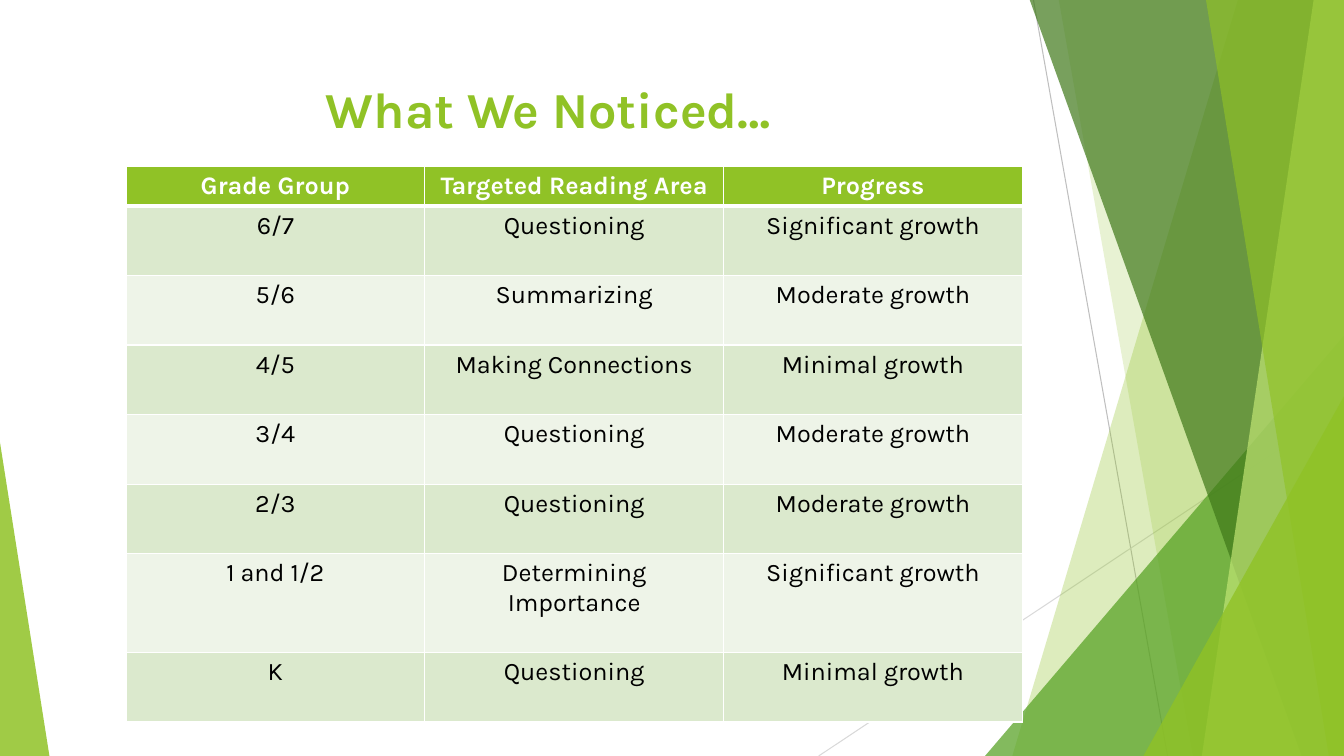
from lxml import etree
from pptx import Presentation
from pptx.dml import color
from pptx.enum import shapes, text
from pptx.oxml import ns
from pptx.util import Inches, Pt

FONT = "Karla"
GREEN = "90C226"
WHITE = "FFFFFF"
BANDS = ("DBE9CD", "EEF4E8")
TOP, RIGHT, BOTTOM = -0.01, 13.33, 7.5
ROWS = [
    ("Grade Group", "Targeted Reading Area", "Progress"),
    ("6/7", "Questioning", "Significant growth"),
    ("5/6", "Summarizing", "Moderate growth"),
    ("4/5", "Making Connections", "Minimal growth"),
    ("3/4", "Questioning", "Moderate growth"),
    ("2/3", "Questioning", "Moderate growth"),
    ("1 and 1/2", "Determining Importance", "Significant growth"),
    ("K", "Questioning", "Minimal growth"),
]
HEIGHTS = [0.39] + [0.69] * 5 + [0.98, 0.69]


def rgb(value):
    """Return the colour for a hex string."""
    return color.RGBColor.from_string(value)


def add_ray(slide, start, end, colour):
    """Draw a thin background line."""
    ray = slide.shapes.add_connector(
        shapes.MSO_CONNECTOR.STRAIGHT, *map(Inches, start + end))
    ray.line.color.rgb = rgb(colour)
    ray.line.width = Pt(0.75)
    etree.SubElement(ray.element.spPr, ns.qn("a:effectLst"))


def paint(shape, colour, opacity):
    """Give a shape a translucent fill without line or shadow."""
    shape.shadow.inherit = False
    shape.fill.solid()
    shape.fill.fore_color.rgb = rgb(colour)
    shape.line.fill.background()
    tint = shape.element.spPr.find(".//" + ns.qn("a:srgbClr"))
    etree.SubElement(tint, ns.qn("a:alpha"), val=str(opacity * 1000))


def add_shard(slide, top_left, bottom_left, colour, opacity):
    """Draw a slanted panel that reaches the right edge of the slide."""
    corners = [(top_left, TOP), (RIGHT, TOP), (RIGHT, BOTTOM), (bottom_left, BOTTOM)]
    points = [(Inches(x), Inches(y)) for x, y in corners]
    builder = slide.shapes.build_freeform(*points[0])
    builder.add_line_segments(points[1:], close=True)
    paint(builder.convert_to_shape(), colour, opacity)


def add_wedge(slide, left, top, width, apex, colour, opacity):
    """Draw a triangle that stands on the bottom edge of the slide."""
    wedge = slide.shapes.add_shape(
        shapes.MSO_SHAPE.ISOSCELES_TRIANGLE,
        *map(Inches, (left, top, width, BOTTOM - top)))
    wedge.adjustments[0] = apex
    paint(wedge, colour, opacity)


def format_text(para, size, colour, bold):
    """Centre a paragraph and set its font."""
    para.alignment = text.PP_ALIGN.CENTER
    para.font.name = FONT
    para.font.size = Pt(size)
    para.font.bold = bold
    para.font.color.rgb = rgb(colour)


def set_title(slide, words):
    """Place and format the title."""
    title = slide.shapes.title
    title.left, title.top, title.width, title.height = map(
        Inches, (0.74, 0.67, 9.4, 0.8))
    frame = title.text_frame
    frame.text = words
    frame.vertical_anchor = text.MSO_ANCHOR.MIDDLE
    format_text(frame.paragraphs[0], 36, GREEN, True)


def add_borders(cell, bottom):
    """Draw white cell borders, with the bottom one in the given width."""
    properties = cell._tc.get_or_add_tcPr()
    widths = {"lnL": 1, "lnR": 1, "lnT": 1, "lnB": bottom}
    for index, (side, width) in enumerate(widths.items()):
        border = etree.Element(ns.qn("a:" + side), w=str(Pt(width)))
        fill = etree.SubElement(border, ns.qn("a:solidFill"))
        etree.SubElement(fill, ns.qn("a:srgbClr"), val=WHITE)
        properties.insert(index, border)


def add_progress_table(slide):
    """Build the table of grade groups and their progress."""
    frame = slide.shapes.add_table(
        len(ROWS), len(ROWS[0]), Inches(1.25), Inches(1.65),
        Inches(8.89), Inches(sum(HEIGHTS)))
    table = frame.table
    for row_index, (row, height) in enumerate(zip(ROWS, HEIGHTS)):
        header = row_index == 0
        table.rows[row_index].height = Inches(height)
        for column_index, words in enumerate(row):
            cell = table.cell(row_index, column_index)
            cell.text = words
            cell.fill.solid()
            cell.fill.fore_color.rgb = rgb(
                GREEN if header else BANDS[(row_index - 1) % 2])
            add_borders(cell, 3 if header else 1)
            format_text(cell.text_frame.paragraphs[0], 18,
                        WHITE if header else "000000", header)


def main():
    """Build the slide and save it."""
    deck = Presentation()
    deck.slide_width, deck.slide_height = Inches(RIGHT), Inches(BOTTOM)
    slide = deck.slides.add_slide(deck.slide_layouts[5])
    add_ray(slide, (10.25, 0), (11.58, BOTTOM), "BFBFBF")
    add_ray(slide, (RIGHT, 4.03), (8.12, BOTTOM), "D9D9D9")
    add_shard(slide, 12.28, 10.04, GREEN, 30)
    add_shard(slide, 10.5, 11.83, GREEN, 20)
    add_wedge(slide, 9.77, 3.33, 3.56, 1, "54A021", 72)
    add_shard(slide, 10.21, 12.91, "3F7819", 70)
    add_shard(slide, 13.03, 11.92, "C0E474", 70)
    add_shard(slide, 11.96, 13.18, GREEN, 65)
    add_wedge(slide, 11.34, 3.93, 1.99, 1, GREEN, 80)
    add_wedge(slide, 0, 4.39, 0.49, 0, GREEN, 85)
    set_title(slide, "What We Noticed…")
    add_progress_table(slide)
    deck.save("out.pptx")


if __name__ == "__main__":
    main()
